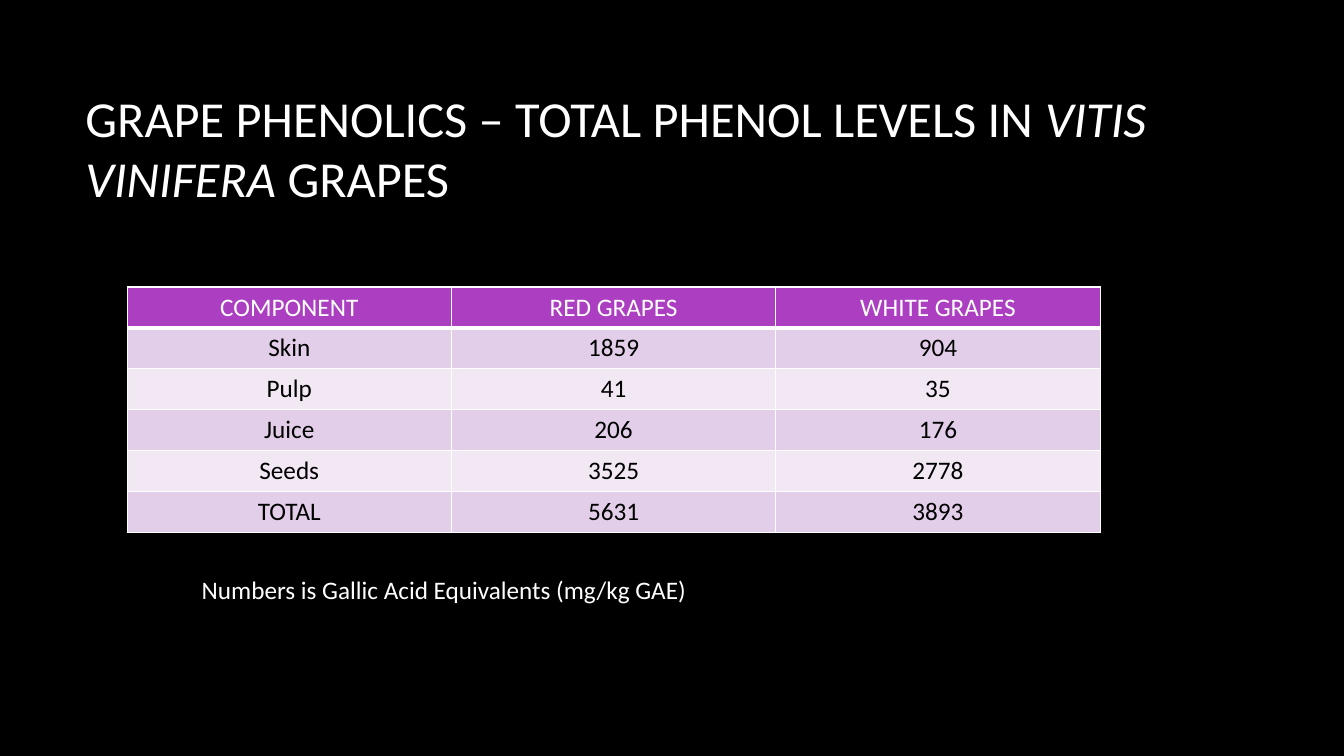
from lxml import etree
from pptx import Presentation
from pptx.dml.color import RGBColor
from pptx.enum.text import MSO_ANCHOR, PP_ALIGN
from pptx.oxml.ns import qn
from pptx.util import Pt

LEFT, CENTER = PP_ALIGN.LEFT, PP_ALIGN.CENTER
TOP, MIDDLE = MSO_ANCHOR.TOP, MSO_ANCHOR.MIDDLE

BLACK = RGBColor(0x00, 0x00, 0x00)
WHITE = RGBColor(0xFF, 0xFF, 0xFF)
PURPLE = RGBColor(0xAC, 0x3E, 0xC1)
LILAC = RGBColor(0xE3, 0xCE, 0xE9)
PALE_LILAC = RGBColor(0xF1, 0xE8, 0xF4)

PHENOL_LEVELS = [
    ("COMPONENT", "RED GRAPES", "WHITE GRAPES"),
    ("Skin", "1859", "904"),
    ("Pulp", "41", "35"),
    ("Juice", "206", "176"),
    ("Seeds", "3525", "2778"),
    ("TOTAL", "5631", "3893"),
]


def add_run(paragraph, text, size=18, color=WHITE, font="Calibri", italic=False):
    run = paragraph.add_run()
    run.text = text
    run.font.name = font
    run.font.size = Pt(size)
    run.font.italic = italic
    run.font.color.rgb = color


def add_border(cell, side, width, color=WHITE):
    properties = cell._tc.get_or_add_tcPr()
    line = etree.SubElement(properties, qn(f"a:ln{side}"), w=str(Pt(width)))
    fill = etree.SubElement(line, qn("a:solidFill"))
    etree.SubElement(fill, qn("a:srgbClr"), val=str(color))


class SlideBuilder:
    def __init__(self, presentation, background):
        self.slide = presentation.slides.add_slide(presentation.slide_layouts[6])
        self.slide.background.fill.solid()
        self.slide.background.fill.fore_color.rgb = background

    def text(self, left, top, width, height, runs, size=18, anchor=TOP):
        shape = self.slide.shapes.add_textbox(Pt(left), Pt(top), Pt(width), Pt(height))
        frame = shape.text_frame
        frame.word_wrap = True
        frame.vertical_anchor = anchor
        paragraph = frame.paragraphs[0]
        paragraph.alignment = LEFT
        for text, italic in runs:
            add_run(paragraph, text, size=size, italic=italic)

    def table(self, left, top, column_width, row_height, rows):
        columns = len(rows[0])
        shape = self.slide.shapes.add_table(
            len(rows), columns, Pt(left), Pt(top),
            Pt(column_width * columns), Pt(row_height * len(rows)))
        table = shape.table
        table.first_row = False
        table.horz_banding = False
        for column in table.columns:
            column.width = Pt(column_width)
        for row_index, values in enumerate(rows):
            table.rows[row_index].height = Pt(row_height)
            for column_index, value in enumerate(values):
                self.cell(table.cell(row_index, column_index), value, row_index)

    def cell(self, cell, value, row_index):
        header = row_index == 0
        for side in "LRTB":
            add_border(cell, side, 3 if header and side == "B" else 1)
        cell.fill.solid()
        band = LILAC if row_index % 2 else PALE_LILAC
        cell.fill.fore_color.rgb = PURPLE if header else band
        paragraph = cell.text_frame.paragraphs[0]
        paragraph.alignment = CENTER
        add_run(paragraph, value, color=WHITE if header else BLACK)


def main():
    presentation = Presentation()
    presentation.slide_width = Pt(960)
    presentation.slide_height = Pt(540)
    builder = SlideBuilder(presentation, BLACK)
    title = [
        ("GRAPE PHENOLICS – TOTAL PHENOL LEVELS IN ", False),
        ("VITIS VINIFERA ", True),
        ("GRAPES", False),
    ]
    builder.text(54, 48, 798, 114.5, title, size=36, anchor=MIDDLE)
    builder.table(90.8, 205, 231.7, 29.2, PHENOL_LEVELS)
    note = [("Numbers is Gallic Acid Equivalents (mg/kg GAE)", False)]
    builder.text(137, 407, 436, 51, note)
    presentation.save("out.pptx")


if __name__ == "__main__":
    main()
